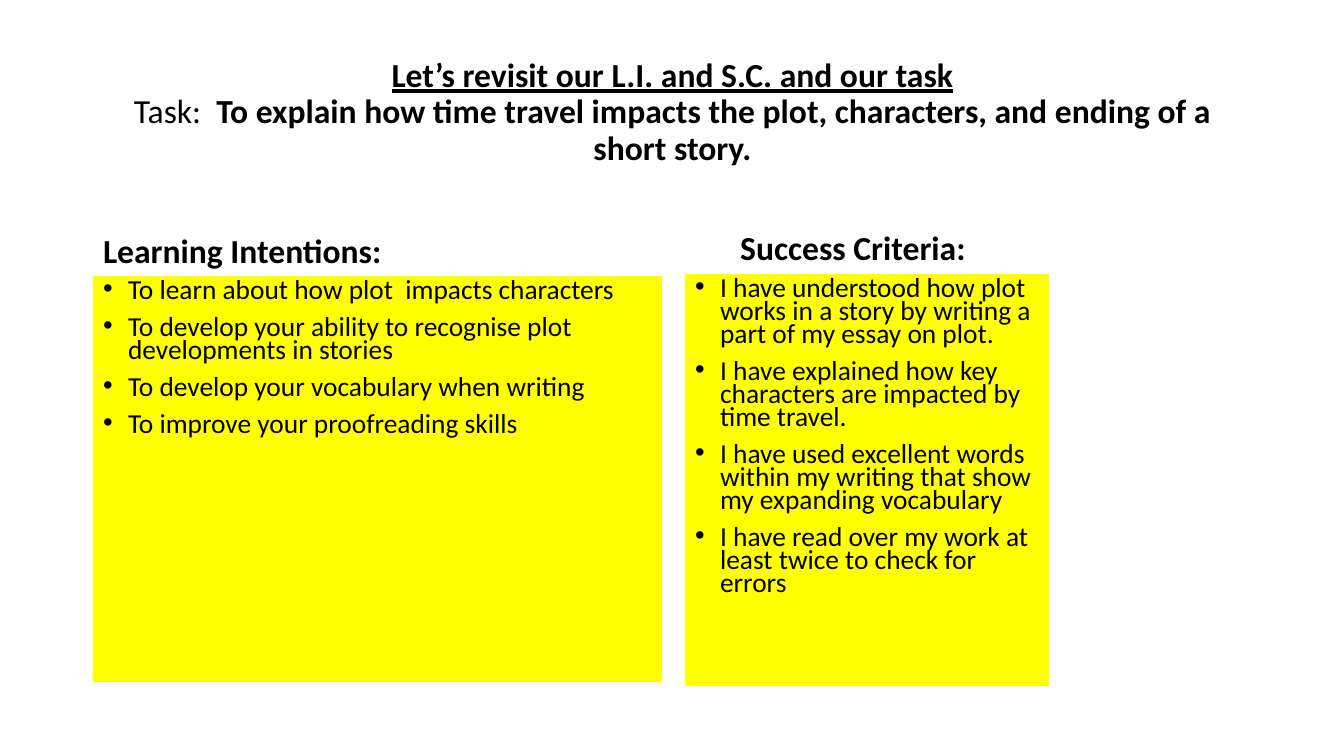
from dataclasses import dataclass
from pptx import Presentation
from pptx import util as u
from pptx.dml.color import RGBColor
from pptx.enum import text

TITLE = [
    ("Let’s revisit our L.I. and S.C. and our task", True, True),
    ("Task:  ", False, False),
    ("To explain how time travel impacts the plot, characters, "
     "and ending of a short story.", True, False),
]
AIMS = [
    "To learn about how plot  impacts characters",
    "To develop your ability to recognise plot developments in stories",
    "To develop your vocabulary when writing",
    "To improve your proofreading skills",
]
GOALS = [
    "I have understood how plot works in a story by writing a part of my essay on plot.",
    "I have explained how key characters are impacted by time travel.",
    "I have used excellent words within my writing that show my expanding vocabulary",
    "I have read over my work at least twice to check for errors",
]
LEFT, CENTER = text.PP_ALIGN.LEFT, text.PP_ALIGN.CENTER
COLUMNS = [
    ("Learning Intentions:", LEFT, (93, 185, 569, 91), AIMS, (93, 276, 569, 406)),
    ("Success Criteria:", CENTER, (671, 210, 364, 63), GOALS, (685, 274, 364, 412)),
]
TITLE_BOX = (93, 40, 1159, 146)
SLIDE = (1344, 756)
INDENT = 25


@dataclass
class Theme:
    font: str = "Calibri"
    ink: str = "000000"
    panel: str = "FFFF00"
    head: float = 24
    body: float = 19.6


theme = Theme()


def px(n):
    return u.Emu(round(n * 914400 / 100.8))


def place(shape, box, anchor):
    shape.left, shape.top, shape.width, shape.height = map(px, box)
    frame = shape.text_frame
    frame.word_wrap = True
    frame.auto_size = text.MSO_AUTO_SIZE.NONE
    frame.vertical_anchor = anchor
    return frame


def style(para, align, lines, before):
    para.alignment = align
    para.line_spacing = lines
    para.space_before = u.Pt(before)


def write(para, words, size, bold=False, under=False):
    run = para.add_run()
    run.text = words
    font = run.font
    font.name, font.size = theme.font, u.Pt(size)
    font.bold, font.underline = bold, under
    font.color.rgb = RGBColor.from_string(theme.ink)


def fill_list(shape, box, items):
    frame = place(shape, box, text.MSO_ANCHOR.TOP)
    shape.fill.solid()
    shape.fill.fore_color.rgb = RGBColor.from_string(theme.panel)
    for i, item in enumerate(items):
        para = frame.add_paragraph() if i else frame.paragraphs[0]
        style(para, LEFT, 0.7, 10)
        props = para._p.get_or_add_pPr()
        props.set("marL", str(px(INDENT)))
        props.set("indent", str(-px(INDENT)))
        write(para, item, theme.body)


def main():
    deck = Presentation()
    deck.slide_width, deck.slide_height = map(px, SLIDE)
    slide = deck.slides.add_slide(deck.slide_layouts.get_by_name("Comparison"))
    title, *bodies = slide.placeholders

    para = place(title, TITLE_BOX, text.MSO_ANCHOR.MIDDLE).paragraphs[0]
    style(para, CENTER, 0.9, 0)
    for i, (words, bold, under) in enumerate(TITLE):
        if i == 1:
            para.add_line_break()
        write(para, words, theme.head, bold, under)

    pairs = zip(bodies[::2], bodies[1::2])
    for (head, panel), (name, align, top, items, box) in zip(pairs, COLUMNS):
        para = place(head, top, text.MSO_ANCHOR.BOTTOM).paragraphs[0]
        style(para, align, 0.9, 10)
        write(para, name, theme.head, True)
        fill_list(panel, box, items)

    deck.save("out.pptx")


if __name__ == "__main__":
    main()
